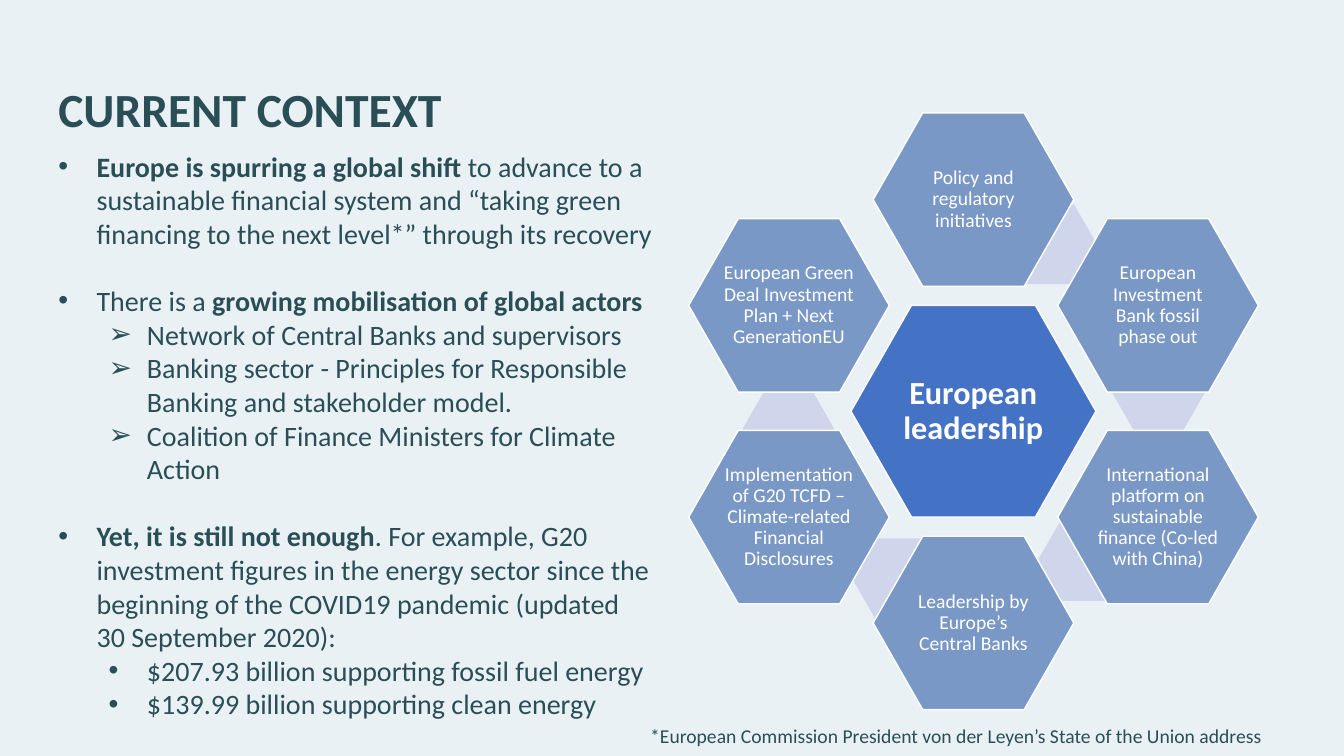
from lxml import etree
from pptx import Presentation
from pptx.dml.color import RGBColor
from pptx.enum.shapes import MSO_SHAPE
from pptx.enum.text import MSO_ANCHOR, PP_ALIGN
from pptx.oxml.ns import qn
from pptx.util import Inches, Pt

HEX = MSO_SHAPE.HEXAGON
MIDDLE = MSO_ANCHOR.MIDDLE
CENTER = PP_ALIGN.CENTER

PAPER, INK, WHITE = "EAF1F5", "294E56", "FFFFFF"
BLUE, STEEL, PALE = "4472C4", "7998C6", "CFD5EA"


def color(code):
    return RGBColor.from_string(code)


class Deck:
    """Holds the text style and the current slide."""

    font = "Calibri"

    def __init__(self):
        self.show = Presentation()
        self.show.slide_width = Inches(13.33)
        self.show.slide_height = Inches(7.5)
        self.slide = self.show.slides.add_slide(self.show.slide_layouts[6])
        fill = self.slide.background.fill
        fill.solid()
        fill.fore_color.rgb = color(PAPER)

    def run(self, para, text, size, ink, bold=False):
        run = para.add_run()
        run.text = text
        run.font.name = self.font
        run.font.size = Pt(size)
        run.font.bold = bold
        run.font.color.rgb = color(ink)

    def indent(self, para, left, hang=0, mark=None):
        props = para._p.get_or_add_pPr()
        props.set("marL", str(Inches(left)))
        props.set("indent", str(Inches(-hang)))
        if mark:
            etree.SubElement(props, qn("a:buFont")).set("typeface", "Arial")
            etree.SubElement(props, qn("a:buChar")).set("char", mark)

    def box(self, left, top, width, height):
        area = Inches(left), Inches(top), Inches(width), Inches(height)
        frame = self.slide.shapes.add_textbox(*area).text_frame
        frame.word_wrap = True
        return frame

    def line(self, text, area, size, bold=False, left=0):
        para = self.box(*area).paragraphs[0]
        self.indent(para, left)
        self.run(para, text, size, INK, bold)

    def list(self, items, area, size):
        frame = self.box(*area)
        for i, (level, mark, gap, runs) in enumerate(items):
            para = frame.add_paragraph() if i else frame.paragraphs[0]
            para.level = level
            self.indent(para, 0.38 + 0.5 * level, 0.38, mark)
            if gap:
                para.space_before = Pt(gap)
            for text, bold in runs:
                self.run(para, text, size, INK, bold)

    def hexagon(self, area, fill, text="", size=14, bold=False):
        shape = self.slide.shapes.add_shape(HEX, *map(Inches, area))
        shape.shadow.inherit = False
        shape.adjustments[0] = 0.286
        shape.fill.solid()
        shape.fill.fore_color.rgb = color(fill)
        if not text:
            shape.line.fill.background()
            return
        shape.line.color.rgb = color(WHITE)
        shape.line.width = Pt(1)
        frame = shape.text_frame
        frame.word_wrap = True
        frame.vertical_anchor = MIDDLE
        frame.margin_left = frame.margin_right = Inches(0.02)
        frame.margin_top = frame.margin_bottom = Inches(0.02)
        para = frame.paragraphs[0]
        para.alignment = CENTER
        para.line_spacing = 0.9
        self.run(para, text, size, WHITE, bold)


ITEMS = [
    (0, "•", 0, [
        ("Europe is spurring a global shift ", True),
        ("to advance to a sustainable financial system and “taking green "
         "financing to the next level*” through its recovery", False)]),
    (0, "•", 24, [("There is a ", False),
                  ("growing mobilisation of global actors", True)]),
    (1, "➢", 0, [("Network of Central Banks and supervisors", False)]),
    (1, "➢", 0, [("Banking sector - Principles for Responsible Banking and "
                  "stakeholder model.", False)]),
    (1, "➢", 0, [("Coalition of Finance Ministers for Climate Action", False)]),
    (0, "•", 24, [
        ("Yet, it is still not enough", True),
        (". For example, G20 investment figures in the energy sector since "
         "the beginning of the COVID19 pandemic (updated 30 September 2020):",
         False)]),
    (1, "•", 0, [("$207.93 billion supporting fossil fuel energy", False)]),
    (1, "•", 0, [("$139.99 billion supporting clean energy", False)]),
]

LINKS = [(9.96, 2.03), (11.03, 3.5), (10.29, 5.17), (8.45, 5.34), (7.36, 3.87)]

RING = [
    (0, -2, "Policy and regulatory initiatives"),
    (1, -1, "European Investment Bank fossil phase out"),
    (1, 1, "International platform on sustainable finance (Co-led with China)"),
    (0, 2, "Leadership by Europe’s Central Banks"),
    (-1, 1, "Implementation of G20 TCFD – Climate-related Financial Disclosures"),
    (-1, -1, "European Green Deal Investment Plan + Next GenerationEU"),
]


def main():
    deck = Deck()
    deck.list(ITEMS, (0.48, 1.43, 6.1, 6.05), 20)
    deck.hexagon((8.44, 3.03, 2.43, 2.1), BLUE, "European leadership", 23, True)
    for left, top in LINKS:
        deck.hexagon((left, top, 0.92, 0.79), PALE)
    for col, row, text in RING:
        area = 8.66 + 1.83 * col, 3.22 + 1.05 * row, 1.99, 1.72
        deck.hexagon(area, STEEL, text)
    deck.line("CURRENT CONTEXT", (0.48, 0.74, 7.58, 0.67), 34, True)
    deck.line("*European Commission President von der Leyen’s State of the "
              "Union address", (5.85, 7.13, 7.05, 0.34), 14, left=0.5)
    deck.show.save("out.pptx")


if __name__ == "__main__":
    main()
